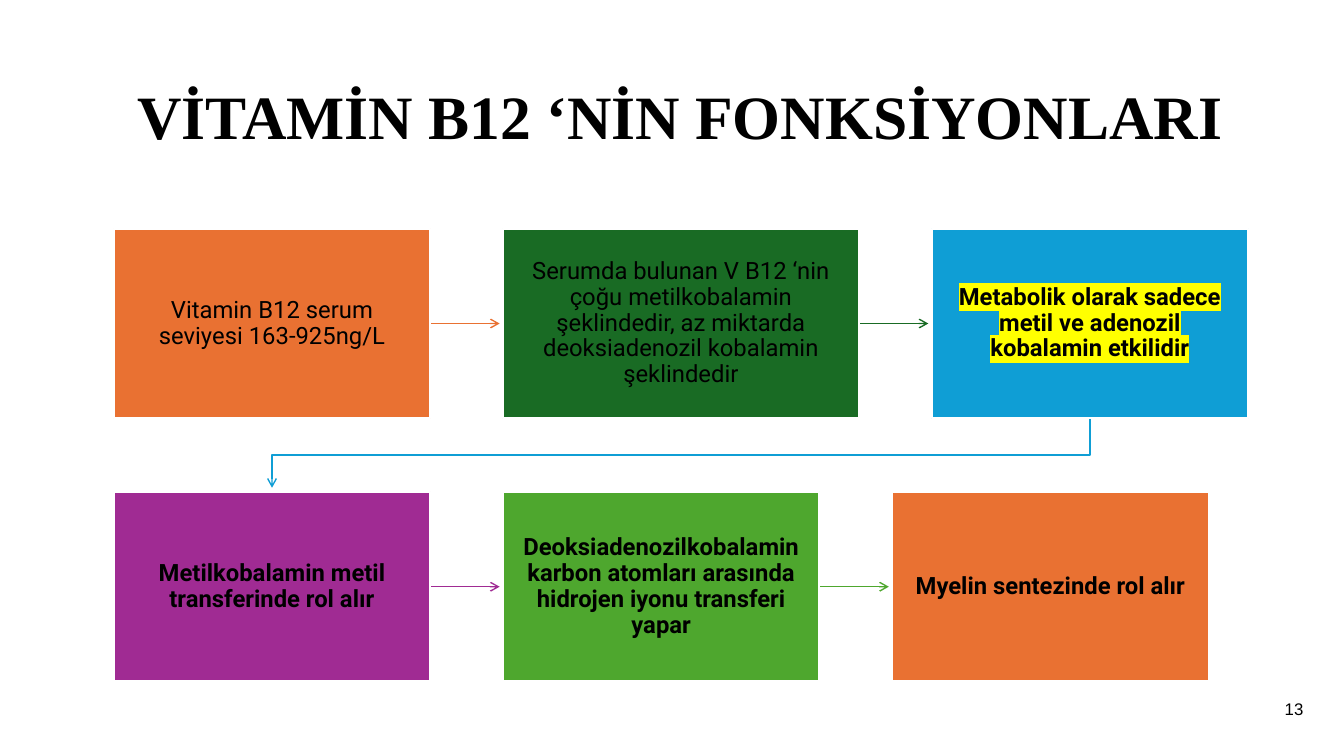
"""Build the slide on the functions of vitamin B12."""
import dataclasses
import typing

import lxml.etree
import pptx
import pptx.dml.color
import pptx.enum.shapes
import pptx.enum.text
import pptx.oxml.ns
import pptx.util

Pt = pptx.util.Pt
Align = pptx.enum.text.PP_ALIGN
Anchor = pptx.enum.text.MSO_ANCHOR
qn = pptx.oxml.ns.qn

LEFT, GAP, HIGH = 81.3, 52, 135.4
REACH = 49.6
TOPS = (163.4, 351.4)
BODY = {"size": Pt(17), "name": "Roboto"}
BOLD = BODY | {"bold": True}
HEAD = {"size": Pt(44), "name": "Times New Roman", "bold": True}
PAGE = {"size": Pt(12), "name": "Arial"}


@dataclasses.dataclass
class Step:
    """One box of the flow."""
    text: str
    fill: str
    wide: float = 226
    font: dict = dataclasses.field(default_factory=lambda: BOLD)
    mark: str = ""


ROWS = (
    (
        Step("Vitamin B12 serum seviyesi 163-925ng/L", "E97132", font=BODY),
        Step("Serumda bulunan V B12 ‘nin çoğu metilkobalamin şeklindedir, "
             "az miktarda deoksiadenozil kobalamin şeklindedir",
             "196B24", 254.2, BODY),
        Step("Metabolik olarak sadece metil ve adenozil kobalamin etkilidir",
             "0F9ED5", mark="FFFF00"),
    ),
    (
        Step("Metilkobalamin metil transferinde rol alır", "A02B93"),
        Step("Deoksiadenozilkobalamin karbon atomları arasında hidrojen "
             "iyonu transferi yapar", "4EA72E"),
        Step("Myelin sentezinde rol alır", "E97132"),
    ),
)


def color(code: str) -> pptx.dml.color.RGBColor:
    """Turn a hex string into a colour."""
    return pptx.dml.color.RGBColor.from_string(code)


def write(shape: typing.Any, text: str, font: dict, frame: dict,
          para: dict, mark: str = "") -> None:
    """Put one formatted paragraph into a shape."""
    body = shape.text_frame
    line = body.paragraphs[0]
    run = line.add_run()
    run.text = text
    for item, form in ((body, frame), (line, para), (run.font, font)):
        for key, value in form.items():
            setattr(item, key, value)
    run.font.color.rgb = color("000000")
    if mark:
        light = lxml.etree.Element(qn("a:highlight"))
        lxml.etree.SubElement(light, qn("a:srgbClr"), val=mark)
        run.font._element.find(qn("a:solidFill")).addnext(light)


def label(slide: typing.Any, area: tuple, text: str, font: dict,
          anchor: typing.Any, para: dict) -> None:
    """Add a text box."""
    box = slide.shapes.add_textbox(*map(Pt, area))
    write(box, text, font,
          {"word_wrap": True, "vertical_anchor": anchor}, para)


def point(line: typing.Any, code: str) -> None:
    """Style a line as an open arrow without shadow."""
    line.line.color.rgb = color(code)
    line.line.width = Pt(1)
    lxml.etree.SubElement(line.line._get_or_add_ln(), qn("a:tailEnd"),
                          type="arrow")
    props = line._element.spPr
    if props.find(qn("a:effectLst")) is None:
        lxml.etree.SubElement(props, qn("a:effectLst"))


def arrow(slide: typing.Any, left: float, top: float, code: str) -> None:
    """Draw a straight arrow across a gap."""
    kind = pptx.enum.shapes.MSO_CONNECTOR.STRAIGHT
    point(slide.shapes.add_connector(
        kind, Pt(left), Pt(top), Pt(left + REACH), Pt(top)), code)


def bend(slide: typing.Any, start: float, end: float, code: str) -> None:
    """Draw the arrow that leads to the next row."""
    top = TOPS[0] + HIGH
    mid = (top + TOPS[1]) / 2
    build = slide.shapes.build_freeform(Pt(start), Pt(top))
    build.add_line_segments(
        [(Pt(start), Pt(mid)), (Pt(end), Pt(mid)),
         (Pt(end), Pt(top + REACH))], close=False)
    line = build.convert_to_shape()
    line.fill.background()
    line.shadow.inherit = False
    point(line, code)


def card(slide: typing.Any, step: Step, left: float, top: float) -> None:
    """Draw one box of the flow."""
    kind = pptx.enum.shapes.MSO_SHAPE.RECTANGLE
    box = slide.shapes.add_shape(
        kind, Pt(left), Pt(top), Pt(step.wide), Pt(HIGH))
    box.shadow.inherit = False
    box.fill.solid()
    box.fill.fore_color.rgb = color(step.fill)
    box.line.color.rgb = color("FFFFFF")
    box.line.width = Pt(1.5)
    frame = {"word_wrap": True, "vertical_anchor": Anchor.MIDDLE,
             "margin_left": Pt(10.8), "margin_right": Pt(10.8),
             "margin_top": Pt(11.6), "margin_bottom": Pt(11.6)}
    write(box, step.text, step.font, frame,
          {"alignment": Align.CENTER, "line_spacing": 0.9}, step.mark)


def main() -> None:
    """Build and save the slide."""
    deck = pptx.Presentation()
    deck.slide_width, deck.slide_height = Pt(960), Pt(540)
    slide = deck.slides.add_slide(deck.slide_layouts[6])
    label(slide, (87.1, 31, 797.8, 81.4), "VİTAMİN B12 ‘NİN FONKSİYONLARI",
          HEAD, Anchor.BOTTOM,
          {"alignment": Align.CENTER, "line_spacing": 0.9})
    label(slide, (897.1, 491.8, 41, 28.8), "13", PAGE, Anchor.MIDDLE,
          {"alignment": Align.RIGHT, "space_after": Pt(6)})
    for top, row in zip(TOPS, ROWS):
        left = LEFT
        for step in row:
            edge = left + step.wide
            if step is not row[-1]:
                arrow(slide, edge, top + HIGH / 2, step.fill)
            elif row is not ROWS[-1]:
                bend(slide, left + step.wide / 2,
                     LEFT + ROWS[1][0].wide / 2, step.fill)
            card(slide, step, left, top)
            left = edge + GAP
    deck.save("out.pptx")


if __name__ == "__main__":
    main()
